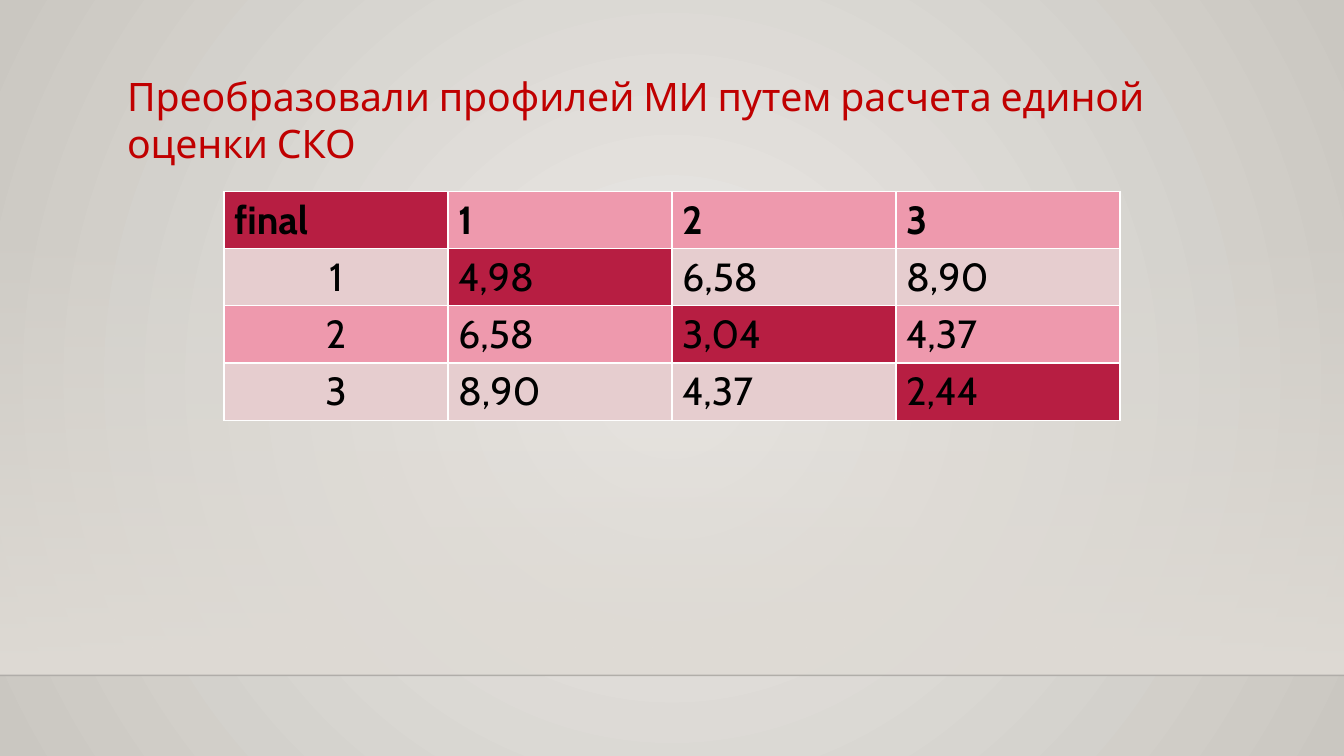
"""Build the slide with the table of profile scores."""
from dataclasses import dataclass

from lxml import etree
from pptx import Presentation, util as u
from pptx.dml.color import RGBColor
from pptx.dml.fill import FillFormat
from pptx.enum import shapes, text
from pptx.oxml.ns import qn
from pptx.slide import Slide
from pptx.text.text import TextFrame

WIDTH, HEIGHT = u.Inches(13.33), u.Inches(7.5)
FONT, SIZE = "Cabin", u.Pt(28)
COLOURS = {
    "centre": "ECEAE7",
    "edge": "CAC7C1",
    "band": "DFDBD5",
    "rule": "000001",
    "title": "C00000",
    "text": "000000",
    "diagonal": "B71E42",
    "strong": "EE99AD",
    "pale": "E6CDCF",
}
TITLE = "Преобразовали профилей МИ путем расчета единой оценки СКО"
SCORES = [
    ["final", "1", "2", "3"],
    ["1", "4,98", "6,58", "8,90"],
    ["2", "6,58", "3,04", "4,37"],
    ["3", "8,90", "4,37", "2,44"],
]


@dataclass(frozen=True)
class Area:
    """A box given as shares of the slide's width and height."""

    left: float
    top: float
    width: float
    height: float

    def lengths(self) -> tuple[int, int, int, int]:
        """Return left, top, width and height as slide lengths."""
        return (int(self.left * WIDTH), int(self.top * HEIGHT),
                int(self.width * WIDTH), int(self.height * HEIGHT))


TITLE_AREA = Area(1.16 / 13.33, 0.67 / 7.5, 11.41 / 13.33, 1.04 / 7.5)
TABLE_AREA = Area(1 / 6, 1.9 / 7.5, 2 / 3, 2.27 / 7.5)
BAND_AREA = Area(0, 2.21 / 7.5, 1, 4.49 / 7.5)


def colour(name: str) -> RGBColor:
    """Return a named colour."""
    return RGBColor.from_string(COLOURS[name])


def set_gradient(fill: FillFormat, start: str, end: str) -> None:
    """Fill with a gradient between two named colours."""
    fill.gradient()
    for stop, name in zip(fill.gradient_stops, (start, end)):
        stop.color.rgb = colour(name)


def set_opacity(element: etree._Element, percent: int) -> None:
    """Set the opacity of the first colour in an element."""
    first = next(element.iter(qn("a:srgbClr")))
    etree.SubElement(first, qn("a:alpha")).set("val", str(percent * 1000))


def write(frame: TextFrame, words: str, name: str, bold: bool = False) -> None:
    """Write one formatted paragraph."""
    frame.text = words
    font = frame.paragraphs[0].runs[0].font
    font.name, font.size, font.bold = FONT, SIZE, bold
    font.color.rgb = colour(name)


def draw_background(slide: Slide) -> None:
    """Draw the radial background, the floor band and its rule."""
    set_gradient(slide.background.fill, "centre", "edge")
    linear = next(slide.element.iter(qn("a:lin")))
    radial = etree.Element(qn("a:path"), {"path": "circle"})
    centre = etree.SubElement(radial, qn("a:fillToRect"))
    for side in "ltrb":
        centre.set(side, "50000")
    linear.getparent().replace(linear, radial)

    band = slide.shapes.add_shape(shapes.MSO_SHAPE.RECTANGLE, *BAND_AREA.lengths())
    band.shadow.inherit = False
    band.line.fill.background()
    set_gradient(band.fill, "band", "band")
    band.fill.gradient_angle = 270
    set_opacity(band.element, 0)

    floor = band.top + band.height
    rule = slide.shapes.add_connector(
        shapes.MSO_CONNECTOR.STRAIGHT, 0, floor, WIDTH, floor)
    rule.line.color.rgb = colour("rule")
    rule.line.width = u.Pt(1)
    set_opacity(rule.element, 20)
    etree.SubElement(rule.element.spPr, qn("a:effectLst"))


def draw_title(slide: Slide) -> None:
    """Place and format the title."""
    title = slide.shapes.title
    title.left, title.top, title.width, title.height = TITLE_AREA.lengths()
    frame = title.text_frame
    write(frame, TITLE, "title")
    frame.word_wrap = True
    frame.auto_size = text.MSO_AUTO_SIZE.SHAPE_TO_FIT_TEXT
    frame.vertical_anchor = text.MSO_ANCHOR.TOP
    frame.paragraphs[0].alignment = text.PP_ALIGN.LEFT


def draw_scores(slide: Slide) -> None:
    """Draw the score table with its diagonal picked out."""
    table = slide.shapes.add_table(
        len(SCORES), len(SCORES[0]), *TABLE_AREA.lengths()).table
    table.horz_banding = False
    for row, values in enumerate(SCORES):
        for column, value in enumerate(values):
            cell = table.cell(row, column)
            band = "pale" if row % 2 else "strong"
            cell.fill.solid()
            cell.fill.fore_color.rgb = colour("diagonal" if row == column else band)
            write(cell.text_frame, value, "text", bold=row == 0)
            if row and not column:
                cell.text_frame.paragraphs[0].alignment = text.PP_ALIGN.CENTER


def main() -> None:
    """Build and save the presentation."""
    presentation = Presentation()
    presentation.slide_width, presentation.slide_height = WIDTH, HEIGHT
    slide = presentation.slides.add_slide(
        presentation.slide_layouts.get_by_name("Title Only"))
    draw_background(slide)
    draw_title(slide)
    draw_scores(slide)
    presentation.save("out.pptx")


if __name__ == "__main__":
    main()
